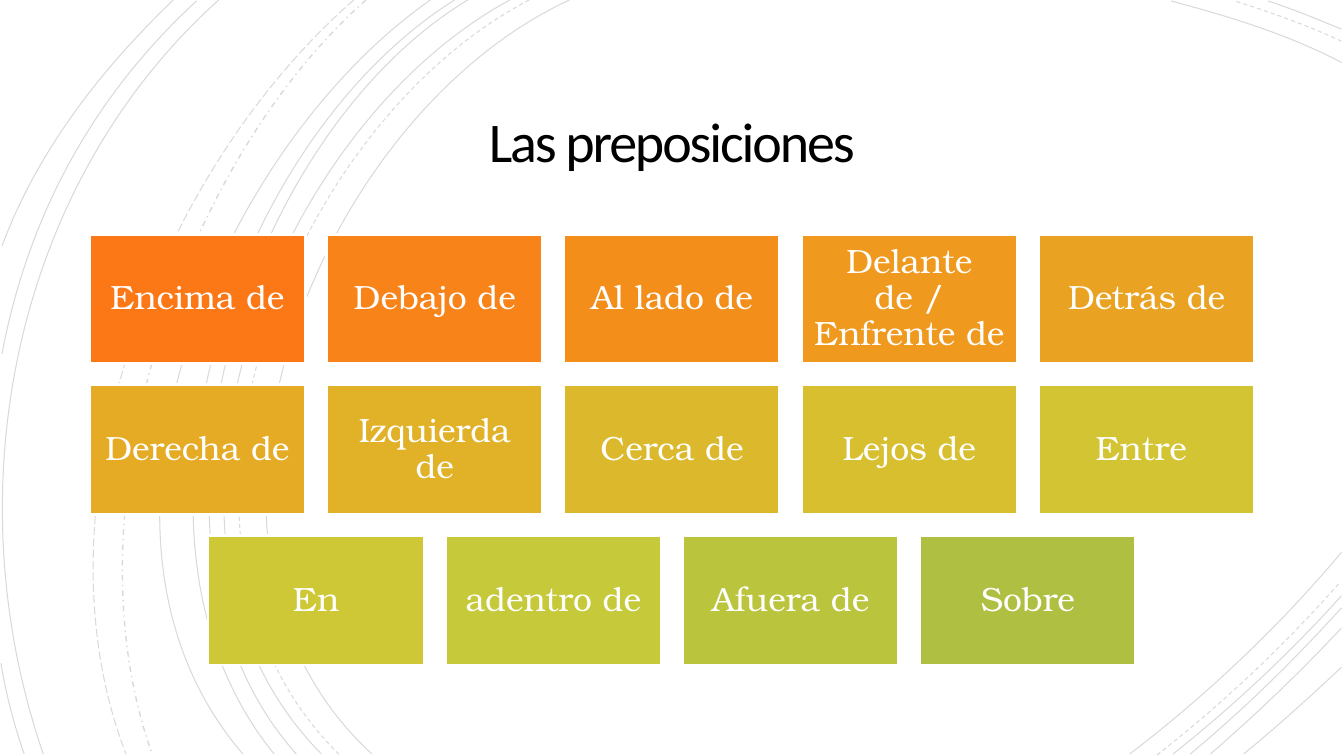
from dataclasses import dataclass

from lxml import etree
from pptx import Presentation
from pptx.dml.color import RGBColor
from pptx.enum.dml import MSO_LINE
from pptx.enum.shapes import MSO_SHAPE
from pptx.enum.text import MSO_ANCHOR, PP_ALIGN
from pptx.oxml.ns import qn
from pptx.slide import Slide
from pptx.text.text import TextFrame
from pptx.util import Cm, Pt

SOLID, DASH = MSO_LINE.SOLID, MSO_LINE.SQUARE_DOT
DASH_DOT, LONG_DASH = MSO_LINE.DASH_DOT, MSO_LINE.LONG_DASH
DASH = MSO_LINE.DASH
RECTANGLE = MSO_SHAPE.RECTANGLE
MIDDLE = MSO_ANCHOR.MIDDLE
CENTER = PP_ALIGN.CENTER

WHITE, BLACK = "FFFFFF", "000000"
HUNDREDTH_INCH = Cm(0.0254)
SLIDE_WIDTH, SLIDE_HEIGHT = 33.87, 19.05
COLUMNS = 5
TILE_WIDTH, TILE_HEIGHT, GAP = 5.44, 3.26, 0.54
TILES_TOP = 5.9


@dataclass(frozen=True)
class Arc:
    start: tuple[int, int]
    controls: tuple[tuple[int, int], tuple[int, int]]
    end: tuple[int, int]
    dash: MSO_LINE = SOLID
    width: float = 0.75


@dataclass(frozen=True)
class Tile:
    label: str
    fill: str


ARCS = [
    Arc((565, 0), ((315, 115), (143, 540)), (369, 748)),
    Arc((1331, 62), ((1278, 34), (1218, 16)), (1162, 1)),
    Arc((1121, 748), ((1197, 690), (1269, 622)), (1331, 548)),
    Arc((525, 0), ((285, 125), (123, 537)), (336, 748), DASH),
    Arc((1331, 41), ((1297, 25), (1260, 12)), (1225, 1), DASH),
    Arc((1148, 749), ((1213, 698), (1275, 640)), (1330, 577), DASH),
    Arc((506, 0), ((270, 127), (110, 537)), (319, 748)),
    Arc((1331, 29), ((1307, 19), (1283, 9)), (1258, 1)),
    Arc((1164, 748), ((1223, 701), (1280, 648)), (1331, 591)),
    Arc((464, 0), ((244, 133), (110, 541)), (294, 748)),
    Arc((1181, 748), ((1234, 704), (1284, 655)), (1331, 603)),
    Arc((451, 0), ((231, 138), (97, 533)), (272, 748)),
    Arc((1201, 748), ((1246, 709), (1290, 667)), (1331, 623)),
    Arc((427, 0), ((217, 147), (53, 529)), (241, 748)),
    Arc((1234, 748), ((1267, 721), (1299, 692)), (1331, 662)),
    Arc((363, 0), ((176, 166), (65, 509)), (151, 748), DASH_DOT, 1),
    Arc((351, 0), ((157, 169), (29, 499)), (125, 748), LONG_DASH),
    Arc((217, 0), ((11, 185), (-46, 490)), (43, 748)),
    Arc((195, 1), ((92, 96), (28, 214)), (2, 351)),
    Arc((1, 658), ((6, 689), (14, 719)), (24, 748)),
    Arc((172, 0), ((100, 69), (37, 150)), (2, 244)),
]

TILES = [
    Tile("Encima de", "FC7715"),
    Tile("Debajo de", "F88318"),
    Tile("Al lado de", "F38E1B"),
    Tile("Delante de / Enfrente de", "EF991E"),
    Tile("Detrás de", "EAA222"),
    Tile("Derecha de", "E6AB25"),
    Tile("Izquierda de", "E1B228"),
    Tile("Cerca de", "DCB92C"),
    Tile("Lejos de", "D7BF2F"),
    Tile("Entre ", "D3C433"),
    Tile("En", "CEC836"),
    Tile("adentro de", "C6C93A"),
    Tile("Afuera de", "BAC43D"),
    Tile("Sobre", "AFBF41"),
]


def color(value: str) -> RGBColor:
    return RGBColor.from_string(value)


def draw_arc(slide: Slide, arc: Arc) -> None:
    builder = slide.shapes.build_freeform(*arc.start, scale=HUNDREDTH_INCH)
    builder.add_line_segments([*arc.controls, arc.end], close=False)
    shape = builder.convert_to_shape()
    shape.shadow.inherit = False
    shape.fill.background()
    shape.line.color.rgb = color(BLACK)
    shape.line.width = Pt(arc.width)
    shape.line.dash_style = arc.dash
    line_color = next(shape.line._ln.iter(qn("a:srgbClr")))
    etree.SubElement(line_color, qn("a:alpha")).set("val", "15000")
    outline = next(shape._element.iter(qn("a:path")))
    curve = etree.SubElement(outline, qn("a:cubicBezTo"))
    for segment in outline.findall(qn("a:lnTo")):
        curve.append(segment[0])
        outline.remove(segment)


def write_text(frame: TextFrame, text: str, font_name: str, size: int,
               text_color: str, inset: float, line_spacing: float,
               letter_spacing: float = 0) -> None:
    frame.word_wrap = True
    frame.vertical_anchor = MIDDLE
    frame.margin_left = frame.margin_right = Cm(inset)
    frame.margin_top = frame.margin_bottom = Cm(inset)
    paragraph = frame.paragraphs[0]
    paragraph.text = text
    paragraph.alignment = CENTER
    paragraph.line_spacing = line_spacing
    paragraph.font.name = font_name
    paragraph.font.size = Pt(size)
    paragraph.font.color.rgb = color(text_color)
    if letter_spacing:
        paragraph.font._rPr.set("spc", str(round(letter_spacing * 100)))


def draw_title(slide: Slide) -> None:
    title = slide.shapes.add_textbox(Cm(4.88), Cm(2.21), Cm(24.1), Cm(2.92))
    write_text(title.text_frame, "Las preposiciones", "Calibri", 40, BLACK,
               0.64, 0.85, -1.5)


def draw_tile(slide: Slide, tile: Tile, left: float, top: float) -> None:
    shape = slide.shapes.add_shape(
        RECTANGLE, Cm(left), Cm(top), Cm(TILE_WIDTH), Cm(TILE_HEIGHT))
    shape.shadow.inherit = False
    shape.fill.solid()
    shape.fill.fore_color.rgb = color(tile.fill)
    shape.line.color.rgb = color(WHITE)
    shape.line.width = Pt(2)
    write_text(shape.text_frame, tile.label, "TeX Gyre Bonum", 24, WHITE,
               0.25, 0.9)


def draw_tiles(slide: Slide) -> None:
    for first in range(0, len(TILES), COLUMNS):
        row = TILES[first:first + COLUMNS]
        row_width = len(row) * (TILE_WIDTH + GAP) - GAP
        left = (SLIDE_WIDTH - row_width) / 2
        top = TILES_TOP + first // COLUMNS * (TILE_HEIGHT + GAP)
        for column, tile in enumerate(row):
            draw_tile(slide, tile, left + column * (TILE_WIDTH + GAP), top)


def main() -> None:
    presentation = Presentation()
    presentation.slide_width = Cm(SLIDE_WIDTH)
    presentation.slide_height = Cm(SLIDE_HEIGHT)
    slide = presentation.slides.add_slide(presentation.slide_layouts[6])
    for arc in ARCS:
        draw_arc(slide, arc)
    draw_title(slide)
    draw_tiles(slide)
    presentation.save("out.pptx")


if __name__ == "__main__":
    main()
